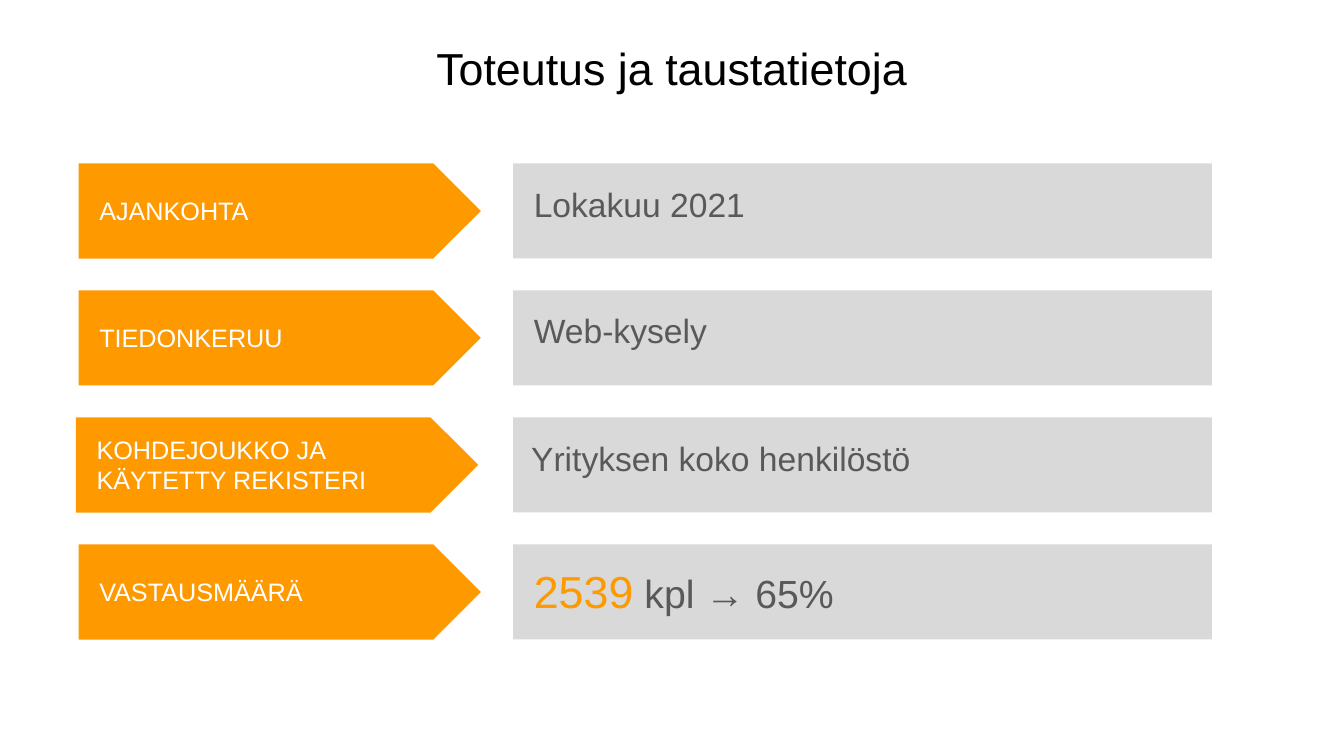
from typing import NamedTuple

from pptx import Presentation
from pptx.dml.color import RGBColor
from pptx.enum.shapes import MSO_SHAPE as Shape
from pptx.enum.text import MSO_ANCHOR as Anchor, PP_ALIGN as Align
from pptx.util import Inches, Pt

ORANGE = RGBColor(0xFF, 0x99, 0x00)
PALE = RGBColor(0xD9, 0xD9, 0xD9)
GREY = RGBColor(0x59, 0x59, 0x59)
WHITE = RGBColor(0xFF, 0xFF, 0xFF)
BLACK = RGBColor(0, 0, 0)

# The grid has 100 columns and 100 rows.
WIDE, HIGH = Inches(13.33), Inches(7.5)
TOP, STEP, TALL = 21.6, 16.8, 12.6
PLATE_X, PLATE_W = 5.85, 29.93
BAR_X, BAR_W = 38.18, 52


class Box(NamedTuple):
    x: float
    y: float
    w: float
    h: float


class Run(NamedTuple):
    text: str
    size: int
    color: RGBColor


class Row(NamedTuple):
    label: str
    value: list[Run]
    label_w: float = 22.8
    label_h: float = 5.33
    value_w: float = 52
    value_h: float = 6.67
    drop: float = 2.1
    shift: float = 0


ROWS = [
    Row("AJANKOHTA", [Run("Lokakuu 2021", 24, GREY)]),
    Row("TIEDONKERUU", [Run("Web-kysely", 24, GREY)], drop=1.9),
    Row("KOHDEJOUKKO JA KÄYTETTY REKISTERI",
        [Run("Yrityksen koko henkilöstö", 24, GREY)],
        label_w=24.75, label_h=9.47, value_w=48.6, shift=-0.2),
    Row("VASTAUSMÄÄRÄ",
        [Run("2539", 32, ORANGE), Run(" kpl → 65%", 28, GREY)],
        label_w=24.75, value_w=51.2, value_h=8.53, drop=1.87),
]


def place(box: Box) -> tuple[int, int, int, int]:
    """Turn grid columns and rows into slide lengths."""
    return (int(WIDE * box.x / 100), int(HIGH * box.y / 100),
            int(WIDE * box.w / 100), int(HIGH * box.h / 100))


def block(slide, kind: Shape, box: Box, color: RGBColor) -> None:
    shape = slide.shapes.add_shape(kind, *place(box))
    shape.shadow.inherit = False
    shape.fill.solid()
    shape.fill.fore_color.rgb = color
    shape.line.fill.background()


def write(slide, box: Box, runs: list[Run], *, align: Align = Align.LEFT,
          anchor: Anchor = Anchor.TOP) -> None:
    frame = slide.shapes.add_textbox(*place(box)).text_frame
    frame.word_wrap = True
    frame.vertical_anchor = anchor
    para = frame.paragraphs[0]
    para.alignment = align
    for part in runs:
        run = para.add_run()
        run.text = part.text
        run.font.name = "Arial"
        run.font.size = Pt(part.size)
        run.font.color.rgb = part.color


def draw(slide, row: Row, y: float) -> None:
    left = PLATE_X + row.shift
    block(slide, Shape.RECTANGLE, Box(BAR_X, y, BAR_W, TALL), PALE)
    block(slide, Shape.PENTAGON, Box(left, y, PLATE_W, TALL), ORANGE)
    middle = y + (TALL - row.label_h) / 2
    write(slide, Box(left + 0.8, middle, row.label_w, row.label_h),
          [Run(row.label, 18, WHITE)])
    write(slide, Box(BAR_X + 0.8 + row.shift, y + row.drop,
                     row.value_w, row.value_h), row.value)


def main() -> None:
    deck = Presentation()
    deck.slide_width, deck.slide_height = WIDE, HIGH
    slide = deck.slides.add_slide(deck.slide_layouts[6])
    for i, row in enumerate(ROWS):
        draw(slide, row, TOP + i * STEP)
    write(slide, Box(5, 4, 90, 9.87),
          [Run("Toteutus ja taustatietoja", 32, BLACK)],
          align=Align.CENTER, anchor=Anchor.MIDDLE)
    deck.save("out.pptx")


if __name__ == "__main__":
    main()
